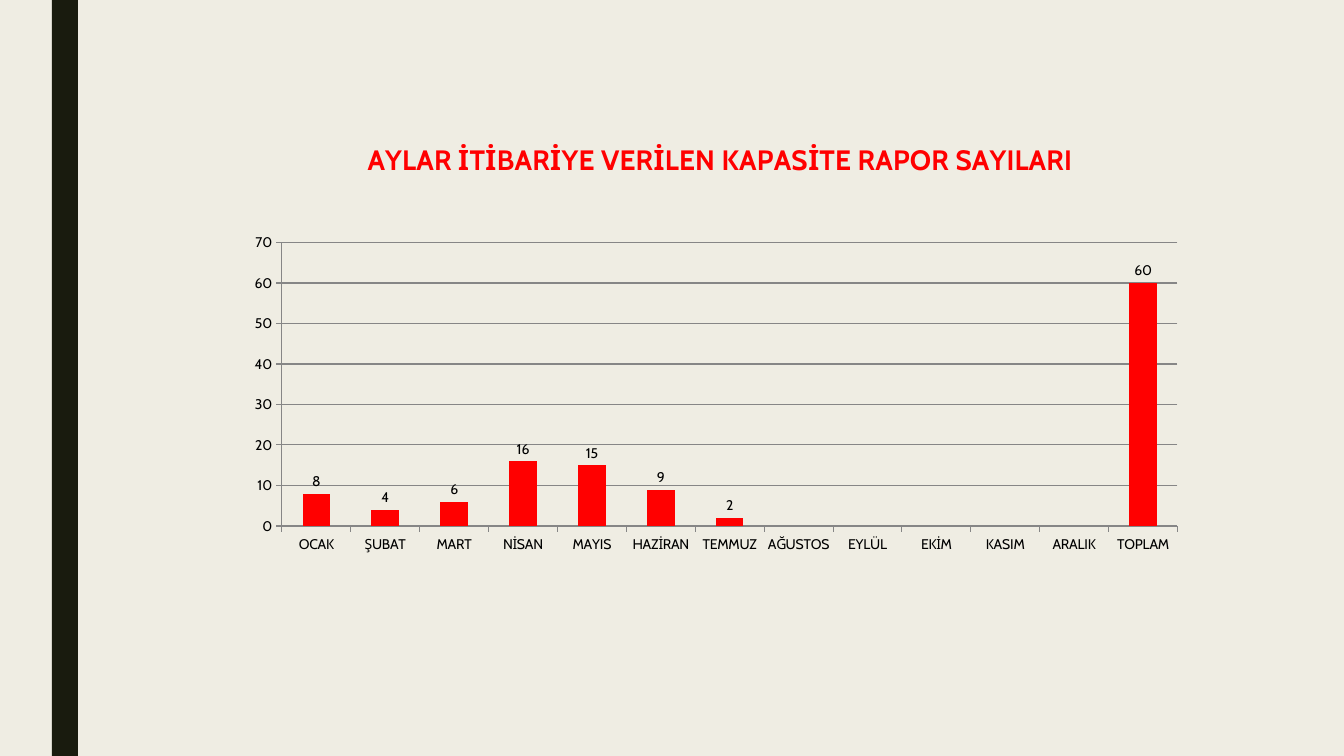
from lxml import etree
from pptx import Presentation, util as u
from pptx.chart.data import CategoryChartData
from pptx.dml.color import RGBColor
from pptx.enum import chart as c, shapes
from pptx.oxml.ns import qn

PX = 914400 / 100.8
THEME = {
    "background": RGBColor.from_string("EFEDE3"),
    "stripe": RGBColor.from_string("191B0E"),
    "accent": RGBColor.from_string("FF0000"),
    "text": RGBColor.from_string("000000"),
    "grid": RGBColor.from_string("868686"),
    "font": "Cabin",
    "title_size": u.Pt(20),
    "label_size": u.Pt(10),
}


def px(*lengths):
    return [u.Emu(round(length * PX)) for length in lengths]


def set_layout(element, **values):
    for old in element.findall(qn("c:layout")):
        element.remove(old)
    layout = etree.Element(qn("c:layout"))
    manual = etree.SubElement(layout, qn("c:manualLayout"))
    for name, value in values.items():
        etree.SubElement(manual, qn(f"c:{name}"), val=str(value))
    text = element.find(qn("c:tx"))
    element.insert(0 if text is None else element.index(text) + 1, layout)


presentation = Presentation()
presentation.slide_width, presentation.slide_height = px(1344, 756)
slide = presentation.slides.add_slide(presentation.slide_layouts[6])
slide.background.fill.solid()
slide.background.fill.fore_color.rgb = THEME["background"]

stripe = slide.shapes.add_shape(shapes.MSO_SHAPE.RECTANGLE, *px(52, 0, 26, 756))
stripe.shadow.inherit = False
stripe.fill.solid()
stripe.fill.fore_color.rgb = THEME["stripe"]
stripe.line.fill.background()

reports = {
    "OCAK": 8, "ŞUBAT": 4, "MART": 6, "NİSAN": 16, "MAYIS": 15,
    "HAZİRAN": 9, "TEMMUZ": 2, "AĞUSTOS": None, "EYLÜL": None,
    "EKİM": None, "KASIM": None, "ARALIK": None, "TOPLAM": 60,
}
data = CategoryChartData()
data.categories = list(reports)
data.add_series("Series 1", list(reports.values()))
chart = slide.shapes.add_chart(
    c.XL_CHART_TYPE.COLUMN_CLUSTERED, *px(225, 114, 982, 529), data).chart
chart.has_legend = False
chart.font.name = THEME["font"]
chart.font.size = THEME["label_size"]
chart.font.color.rgb = THEME["text"]

chart.has_title = True
title = chart.chart_title
title.include_in_layout = False
title.text_frame.text = "AYLAR İTİBARİYE VERİLEN KAPASİTE RAPOR SAYILARI"
title_font = title.text_frame.paragraphs[0].runs[0].font
title_format = {"name": THEME["font"], "size": THEME["title_size"], "bold": True}
for name, value in title_format.items():
    setattr(title_font, name, value)
title_font.color.rgb = THEME["accent"]
set_layout(title._element, xMode="edge", yMode="edge", x=0.14, y=0.04)

plot = chart.plots[0]
plot.gap_width = 150
plot.vary_by_categories = False
series = plot.series[0]
series.format.fill.solid()
series.format.fill.fore_color.rgb = THEME["accent"]
labels = series.data_labels
labels.show_value = True
labels.position = c.XL_LABEL_POSITION.OUTSIDE_END

value_axis, category_axis = chart.value_axis, chart.category_axis
axis_format = {
    "minimum_scale": 0, "maximum_scale": 70, "major_unit": 10,
    "has_major_gridlines": True,
}
for name, value in axis_format.items():
    setattr(value_axis, name, value)
for axis in (value_axis, category_axis):
    axis.major_tick_mark = c.XL_TICK_MARK.OUTSIDE
for part in (value_axis, category_axis, value_axis.major_gridlines):
    part.format.line.color.rgb = THEME["grid"]
    part.format.line.width = u.Pt(0.75)

plot_area = chart._chartSpace.find(f".//{qn('c:plotArea')}")
set_layout(plot_area, layoutTarget="inner", xMode="edge", yMode="edge",
           x=0.058, y=0.243, w=0.912, h=0.536)

presentation.save("out.pptx")
